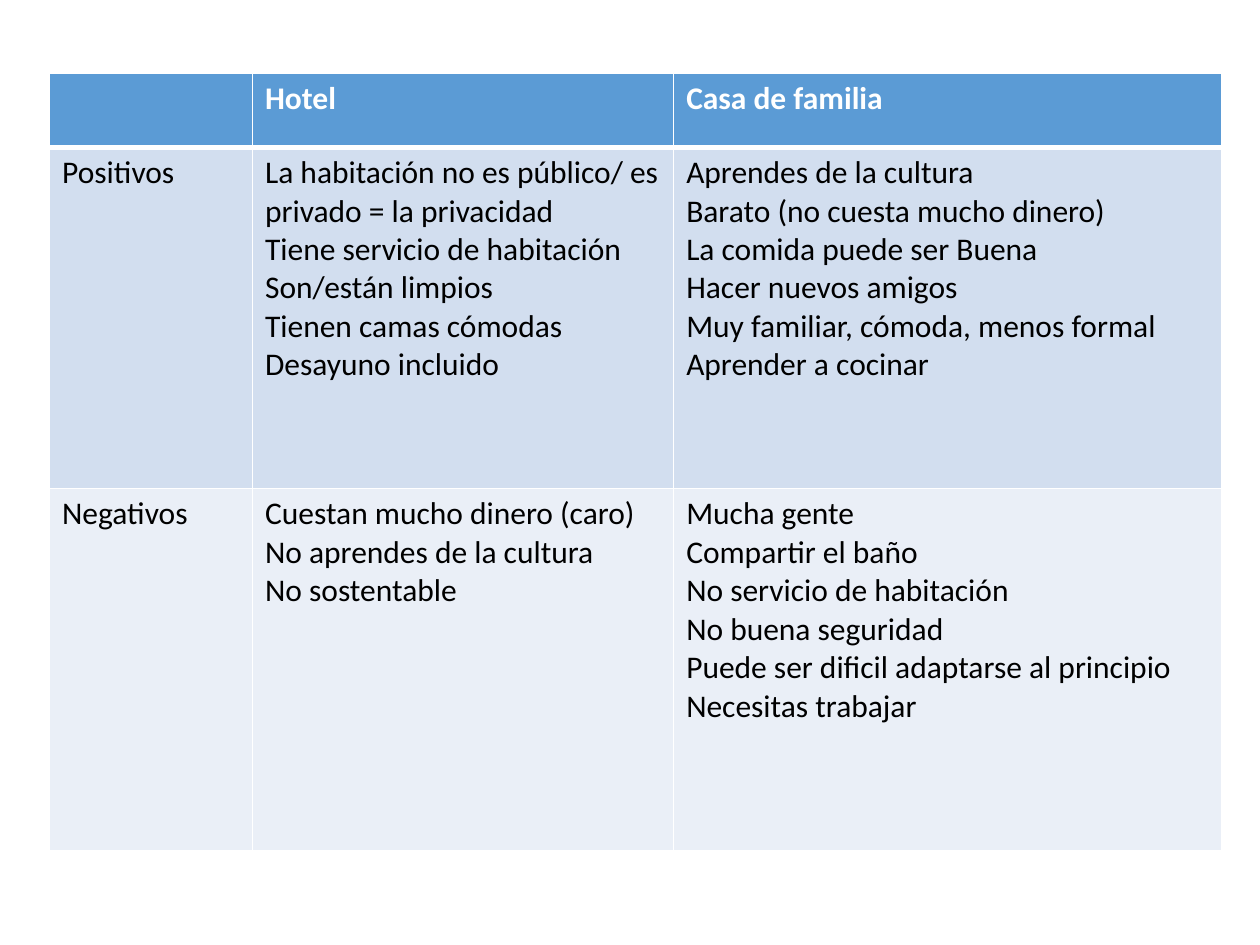
from lxml import etree
from pptx import Presentation
from pptx import util as u
from pptx.dml.color import RGBColor
from pptx.oxml.ns import qn

FONT = "Calibri"
WHITE, BLACK = "FFFFFF", "000000"
ROW_FILLS = ["5B9BD5", "D2DEEF", "EAEFF7"]
COLUMN_WIDTHS = [4.09, 8.49, 11.04]
ROW_HEIGHTS = [1.49, 6.88, 7.31]

# Each cell is a list of paragraphs.
ROWS = [
    [[], ["Hotel"], ["Casa de familia"]],
    [
        ["Positivos"],
        [
            "La habitación no es público/ es privado = la privacidad",
            "Tiene servicio de habitación",
            "Son/están limpios",
            "Tienen camas cómodas",
            "Desayuno incluido",
        ],
        [
            "Aprendes de la cultura",
            "Barato (no cuesta mucho dinero)",
            "La comida puede ser Buena",
            "Hacer nuevos amigos",
            "Muy familiar, cómoda, menos formal",
            "Aprender a cocinar",
        ],
    ],
    [
        ["Negativos"],
        [
            "Cuestan mucho dinero (caro)",
            "No aprendes de la cultura",
            "No sostentable",
        ],
        [
            "Mucha gente",
            "Compartir el baño",
            "No servicio de habitación",
            "No buena seguridad",
            "Puede ser dificil adaptarse al principio",
            "Necesitas trabajar",
        ],
    ],
]


def color(hex_value):
    return RGBColor.from_string(hex_value)


def set_borders(cell, top, bottom):
    """Draw white borders; top and bottom are widths in points."""
    properties = cell._tc.get_or_add_tcPr()
    for side, width in (("L", 1), ("R", 1), ("T", top), ("B", bottom)):
        line = etree.SubElement(properties, qn(f"a:ln{side}"), w=str(u.Pt(width)))
        fill = etree.SubElement(line, qn("a:solidFill"))
        etree.SubElement(fill, qn("a:srgbClr"), val=WHITE)


def write_paragraphs(cell, lines, font_color, bold):
    frame = cell.text_frame
    for index, line in enumerate(lines):
        paragraph = frame.add_paragraph() if index else frame.paragraphs[0]
        run = paragraph.add_run()
        run.text = line
        run.font.name = FONT
        run.font.size = u.Pt(18)
        run.font.bold = bold
        run.font.color.rgb = color(font_color)


def add_comparison_table(slide):
    frame = slide.shapes.add_table(
        len(ROWS), len(COLUMN_WIDTHS), u.Cm(1), u.Cm(1.48),
        u.Cm(sum(COLUMN_WIDTHS)), u.Cm(sum(ROW_HEIGHTS)))
    table = frame.table
    for column, width in zip(table.columns, COLUMN_WIDTHS):
        column.width = u.Cm(width)
    for row_index, (row, height) in enumerate(zip(table.rows, ROW_HEIGHTS)):
        row.height = u.Cm(height)
        is_header = row_index == 0
        for cell, lines in zip(row.cells, ROWS[row_index]):
            set_borders(cell, top=3 if row_index == 1 else 1,
                        bottom=3 if is_header else 1)
            cell.fill.solid()
            cell.fill.fore_color.rgb = color(ROW_FILLS[row_index])
            write_paragraphs(cell, lines, WHITE if is_header else BLACK, is_header)


def main():
    presentation = Presentation()
    presentation.slide_width = u.Cm(25.4)
    presentation.slide_height = u.Cm(19.05)
    slide = presentation.slides.add_slide(presentation.slide_layouts[6])
    add_comparison_table(slide)
    presentation.save("out.pptx")


if __name__ == "__main__":
    main()
